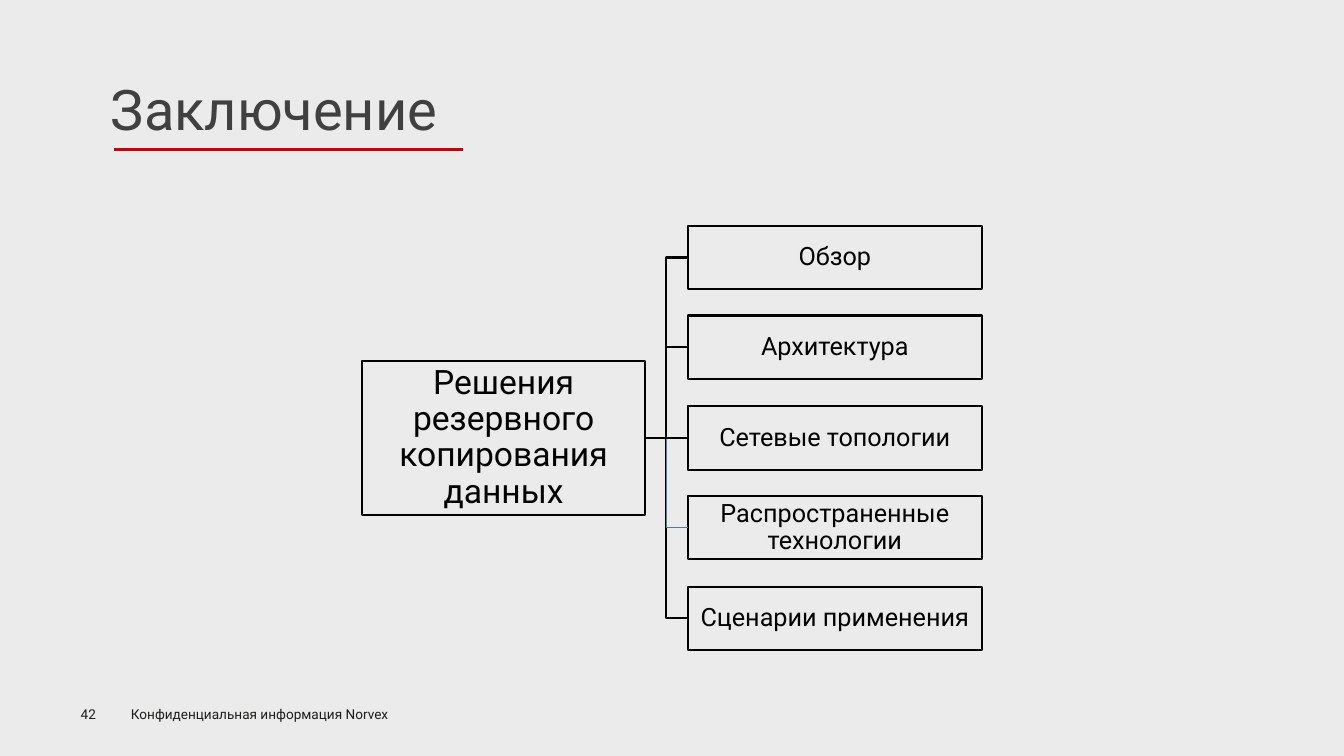
import pptx
import pptx.util
import pptx.dml.color
import pptx.enum.shapes
import pptx.enum.text
import pptx.oxml.ns
import lxml.etree

RGBColor = pptx.dml.color.RGBColor
BLACK = RGBColor(0x00, 0x00, 0x00)
BLUE = RGBColor(0x49, 0x7C, 0xAB)
RED = RGBColor(0xC7, 0x00, 0x0B)
GREY = RGBColor(0x40, 0x40, 0x40)
INK = RGBColor(0x1D, 0x1D, 0x1B)
PAPER = RGBColor(0xEB, 0xEB, 0xEB)

FONT = "Roboto"
SCALE = 9144
TOPICS = [
    "Обзор",
    "Архитектура",
    "Сетевые топологии",
    "Распространенные технологии",
    "Сценарии применения",
]
LINK = pptx.enum.shapes.MSO_CONNECTOR
ALIGN = pptx.enum.text.PP_ALIGN
ANCHOR = pptx.enum.text.MSO_ANCHOR


def px(*sizes):
    return [pptx.util.Emu(size * SCALE) for size in sizes]


def write(frame, text, size, color, align=ALIGN.LEFT):
    para = frame.paragraphs[0]
    para.alignment = align
    run = para.add_run()
    run.text = text
    run.font.name = FONT
    run.font.size = pptx.util.Pt(size)
    run.font.color.rgb = color
    return para


def pad(frame, inset):
    side = px(inset)[0]
    frame.margin_left = frame.margin_right = side
    frame.margin_top = frame.margin_bottom = side


def add_title(slide, text):
    title = slide.shapes.title
    title.left, title.top, title.width, title.height = px(100, 69, 366, 77)
    frame = title.text_frame
    frame.word_wrap = False
    frame.auto_size = pptx.enum.text.MSO_AUTO_SIZE.NONE
    frame.vertical_anchor = ANCHOR.TOP
    write(frame, text, 40, GREY)


def add_note(slide, text, place, inset=None):
    frame = slide.shapes.add_textbox(*px(*place)).text_frame
    frame.word_wrap = True
    if inset is not None:
        pad(frame, inset)
    write(frame, text, 9.7, INK)


def add_box(slide, text, place, size, inset):
    kind = pptx.enum.shapes.MSO_SHAPE.RECTANGLE
    box = slide.shapes.add_shape(kind, *px(*place))
    box.shadow.inherit = False
    box.fill.background()
    box.line.color.rgb = BLACK
    box.line.width = pptx.util.Pt(1.5)
    frame = box.text_frame
    frame.word_wrap = True
    frame.vertical_anchor = ANCHOR.MIDDLE
    pad(frame, inset)
    para = write(frame, text, size, BLACK, ALIGN.CENTER)
    para.line_spacing = 0.9
    return box


def add_line(slide, kind, ends, color, width):
    line = slide.shapes.add_connector(kind, *px(*ends))
    line.line.color.rgb = color
    line.line.width = pptx.util.Pt(width)
    props = line._element.spPr
    lxml.etree.SubElement(props, pptx.oxml.ns.qn("a:effectLst"))
    return line


def join(slide, root, box, color, width):
    level = root.top + root.height // 2 == box.top + box.height // 2
    kind = LINK.STRAIGHT if level else LINK.ELBOW
    line = add_line(slide, kind, (0, 0, 0, 0), color, width)
    line.begin_connect(root, 3)
    line.end_connect(box, 1)


def add_tree(slide):
    root = add_box(slide, "Решения резервного копирования данных",
                   (359, 358, 281, 153), 24, 2)
    boxes = [add_box(slide, topic, (682, 224 + 179 * row // 2, 292, 63), 18, 1)
             for row, topic in enumerate(TOPICS)]
    for row in reversed(range(len(boxes))):
        color, width = (BLUE, 1) if row == 3 else (BLACK, 1.5)
        join(slide, root, boxes[row], color, width)


def main():
    deck = pptx.Presentation()
    deck.slide_width, deck.slide_height = px(1333, 750)
    slide = deck.slides.add_slide(deck.slide_layouts[5])
    slide.background.fill.solid()
    slide.background.fill.fore_color.rgb = PAPER
    add_title(slide, "Заключение")
    add_line(slide, LINK.STRAIGHT, (113, 148, 459, 148), RED, 2.25)
    add_tree(slide)
    add_note(slide, "42", (80, 700, 55, 16), 0)
    add_note(slide, "Конфиденциальная информация Norvex", (120, 695, 320, 26))
    deck.save("out.pptx")


if __name__ == "__main__":
    main()
